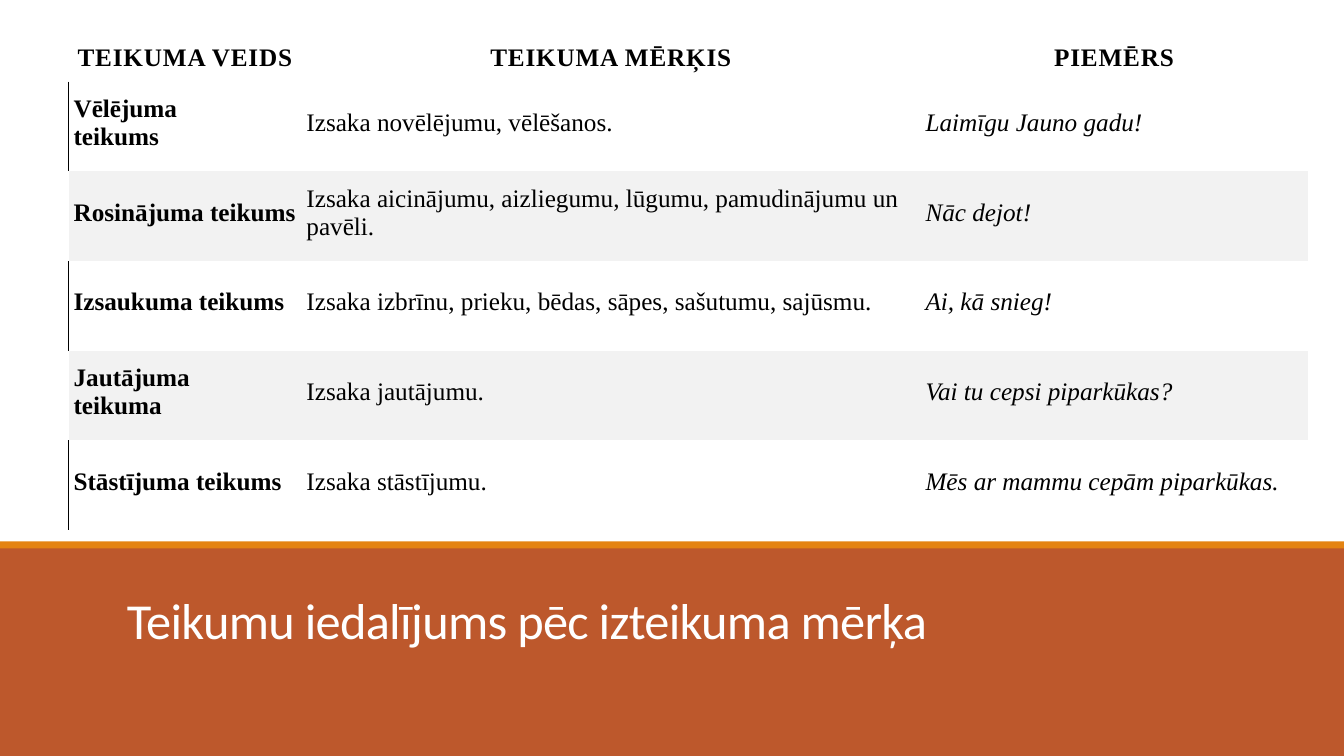
import pptx
import pptx.dml.color
import pptx.enum.shapes
import pptx.enum.text
import pptx.oxml
import pptx.oxml.ns
import pptx.util
from pptx.util import Inches

RGBColor = pptx.dml.color.RGBColor
Align = pptx.enum.text.PP_ALIGN
Anchor = pptx.enum.text.MSO_ANCHOR

BLACK = RGBColor(0x00, 0x00, 0x00)
WHITE = RGBColor(0xFF, 0xFF, 0xFF)
RUST = RGBColor(0xBD, 0x58, 0x2C)
ORANGE = RGBColor(0xE4, 0x83, 0x12)
BAND_GRAY = RGBColor(0xF2, 0xF2, 0xF2)

NO_STYLE_NO_GRID = "{2D5ABB26-0587-4C30-8999-92F81FD0307C}"
SLIDE_WIDTH = 13.33
COLUMN_WIDTHS = [2.31, 6.14, 3.84]
HEADER_HEIGHT, ROW_HEIGHT = 0.56, 0.89

HEADINGS = ["TEIKUMA VEIDS", "TEIKUMA MĒRĶIS", "PIEMĒRS"]
SENTENCE_TYPES = [
    ("Vēlējuma\nteikums", "Izsaka novēlējumu, vēlēšanos.", "Laimīgu Jauno gadu!"),
    ("Rosinājuma teikums",
     "Izsaka aicinājumu, aizliegumu, lūgumu, pamudinājumu un pavēli.", "Nāc dejot!"),
    ("Izsaukuma teikums",
     "Izsaka izbrīnu, prieku, bēdas, sāpes, sašutumu, sajūsmu.", "Ai, kā snieg!"),
    ("Jautājuma\nteikuma", "Izsaka jautājumu.", "Vai tu cepsi piparkūkas?"),
    ("Stāstījuma teikums", "Izsaka stāstījumu.", "Mēs ar mammu cepām piparkūkas."),
]


def write_text(frame, text, font="Times New Roman", size=18, color=BLACK, bold=False,
               italic=False, align=Align.LEFT, tracking=0, line_spacing=None):
    """Fill a text frame, one paragraph per line of text."""
    frame.word_wrap = True
    for index, line in enumerate(text.split("\n")):
        paragraph = frame.add_paragraph() if index else frame.paragraphs[0]
        paragraph.alignment = align
        if line_spacing:
            paragraph.line_spacing = line_spacing
        run = paragraph.add_run()
        run.text = line
        run.font.name = font
        run.font.size = pptx.util.Pt(size)
        run.font.bold = bold
        run.font.italic = italic
        run.font.color.rgb = color
        if tracking:
            run.font._element.set("spc", str(round(tracking * 100)))


def add_band(slide, top, height, color):
    """Full-width coloured strip."""
    band = slide.shapes.add_shape(pptx.enum.shapes.MSO_SHAPE.RECTANGLE, 0, Inches(top),
                                  Inches(SLIDE_WIDTH), Inches(height))
    band.shadow.inherit = False
    band.fill.solid()
    band.fill.fore_color.rgb = color
    band.line.fill.background()


def add_title(slide, text):
    title = slide.shapes.add_textbox(Inches(1.16), Inches(5.6), Inches(11), Inches(0.9))
    title.text_frame.vertical_anchor = Anchor.BOTTOM
    write_text(title.text_frame, text, font="Calibri", size=36, color=WHITE,
               tracking=-0.5, line_spacing=0.85)


def format_cell(cell, top_margin, anchor, fill=None):
    cell.margin_left = cell.margin_right = Inches(0.05)
    cell.margin_top, cell.margin_bottom = Inches(top_margin), Inches(0.1)
    cell.vertical_anchor = anchor
    if fill is None:
        cell.fill.background()
    else:
        cell.fill.solid()
        cell.fill.fore_color.rgb = fill


def add_left_border(cell):
    border = pptx.oxml.parse_xml(
        f'<a:lnL {pptx.oxml.ns.nsdecls("a")} w="12700"><a:solidFill>'
        f'<a:srgbClr val="{BLACK}"/></a:solidFill></a:lnL>')
    cell._tc.get_or_add_tcPr().insert(0, border)


def add_sentence_table(slide):
    row_heights = [HEADER_HEIGHT] + [ROW_HEIGHT] * len(SENTENCE_TYPES)
    table = slide.shapes.add_table(
        len(row_heights), len(COLUMN_WIDTHS), Inches(0.68), Inches(0.25),
        Inches(sum(COLUMN_WIDTHS)), Inches(sum(row_heights))).table
    table.first_row = table.horz_banding = False
    table._tbl.tblPr.find(pptx.oxml.ns.qn("a:tableStyleId")).text = NO_STYLE_NO_GRID
    for column, width in zip(table.columns, COLUMN_WIDTHS):
        column.width = Inches(width)
    for row, height in zip(table.rows, row_heights):
        row.height = Inches(height)

    # Headings
    for column, heading in enumerate(HEADINGS):
        cell = table.cell(0, column)
        format_cell(cell, 0.1, Anchor.BOTTOM)
        write_text(cell.text_frame, heading, bold=True, align=Align.CENTER, tracking=0.6)

    # Sentence types: every second row shaded, the others ruled on the left
    for row, entries in enumerate(SENTENCE_TYPES, start=1):
        shaded = row % 2 == 0
        for column, entry in enumerate(entries):
            cell = table.cell(row, column)
            format_cell(cell, 0.03, Anchor.MIDDLE, BAND_GRAY if shaded else None)
            write_text(cell.text_frame, entry, bold=column == 0, italic=column == 2)
        if not shaded:
            add_left_border(table.cell(row, 0))


def main():
    presentation = pptx.Presentation()
    presentation.slide_width = Inches(SLIDE_WIDTH)
    presentation.slide_height = Inches(7.5)
    slide = presentation.slides.add_slide(presentation.slide_layouts[6])

    # Title panel with its accent strip
    add_band(slide, 5.42, 2.08, RUST)
    add_title(slide, "Teikumu iedalījums pēc izteikuma mērķa")
    add_band(slide, 5.37, 0.07, ORANGE)

    add_sentence_table(slide)
    presentation.save("out.pptx")


if __name__ == "__main__":
    main()
